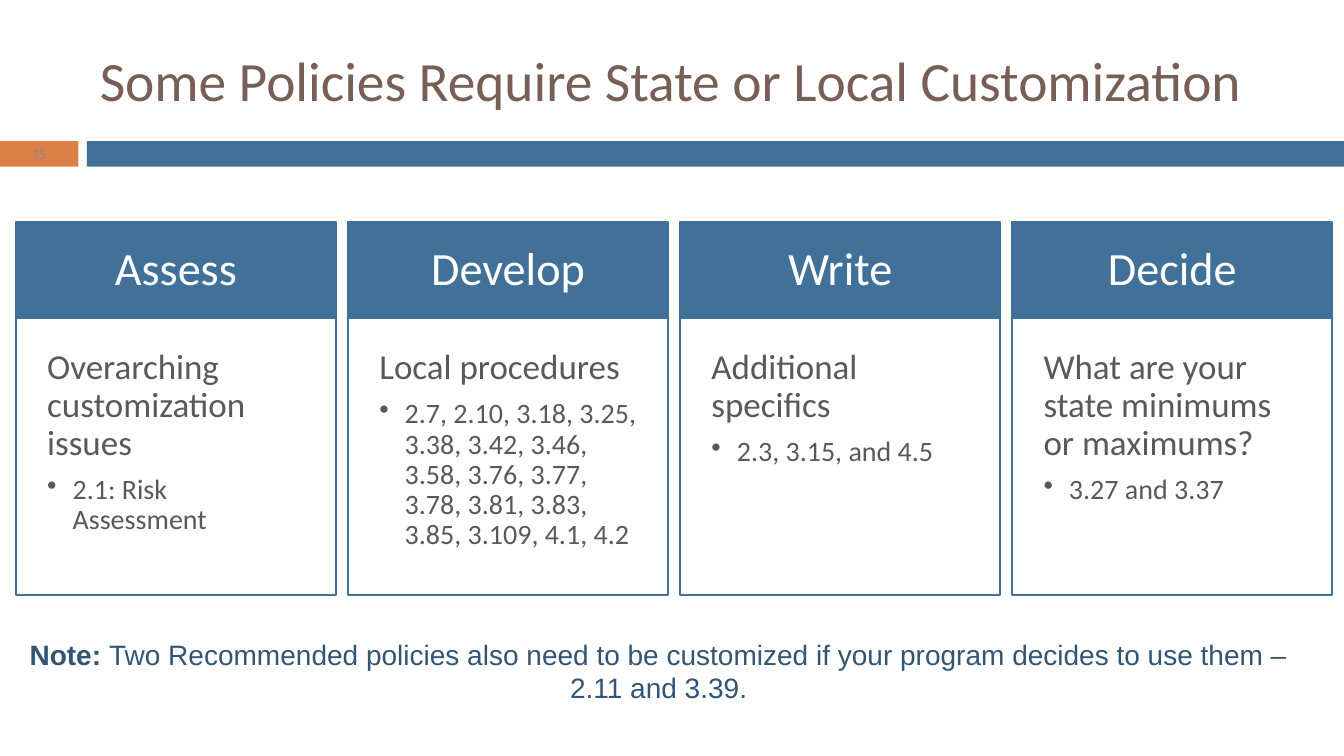
import pptx
import pptx.dml.color
import pptx.enum.shapes
import pptx.enum.text
import pptx.oxml
import pptx.oxml.ns
import pptx.util

Cm = pptx.util.Cm
Pt = pptx.util.Pt
RGBColor = pptx.dml.color.RGBColor
ALIGN = pptx.enum.text.PP_ALIGN
ANCHOR = pptx.enum.text.MSO_ANCHOR

TITLE = "Some Policies Require State or Local Customization"
SLIDE_NUMBER = "15"
COLUMNS = [
    ("Assess", "Overarching customization issues", "2.1: Risk Assessment"),
    ("Develop", "Local procedures",
     "2.7, 2.10, 3.18, 3.25, 3.38, 3.42, 3.46, 3.58, 3.76, 3.77, 3.78, "
     "3.81, 3.83, 3.85, 3.109, 4.1, 4.2"),
    ("Write", "Additional specifics", "2.3, 3.15, and 4.5"),
    ("Decide", "What are your state minimums or maximums?", "3.27 and 3.37"),
]
NOTE_LABEL = "Note: "
NOTE = ("Two Recommended policies also need to be customized if your program "
        "decides to use them – 2.11 and 3.39.")

BLUE = RGBColor(0x41, 0x71, 0x99)
ORANGE = RGBColor(0xDD, 0x80, 0x47)
BROWN = RGBColor(0x77, 0x5F, 0x55)
NAVY = RGBColor(0x31, 0x55, 0x73)
DARK_GREY = RGBColor(0x59, 0x59, 0x59)
MID_GREY = RGBColor(0x89, 0x89, 0x89)
WHITE = RGBColor(0xFF, 0xFF, 0xFF)

SLIDE_WIDTH, SLIDE_HEIGHT = Cm(33.87), Cm(19.05)
BAR_TOP, BAR_HEIGHT = Cm(3.56), Cm(0.64)
COLUMN_LEFT, COLUMN_PITCH, COLUMN_WIDTH = Cm(0.4), Cm(8.37), Cm(8.07)
HEADER_TOP, HEADER_HEIGHT, BODY_HEIGHT = Cm(5.59), Cm(2.43), Cm(6.98)
BULLET_INDENT = Cm(0.64)

TITLE_FORMAT = {"size": Pt(39.6), "name": "Calibri"}
NUMBER_FORMAT = {"size": Pt(10.5), "name": "Calibri"}
HEADER_FORMAT = {"size": Pt(33), "name": "Calibri"}
LEAD_FORMAT = {"size": Pt(25), "name": "Calibri"}
ITEM_FORMAT = {"size": Pt(20), "name": "Calibri"}
LABEL_FORMAT = {"size": Pt(20), "name": "Arial", "bold": True}
NOTE_FORMAT = {"size": Pt(20), "name": "Arial", "bold": False}


def set_attributes(target, values):
    for name, value in values.items():
        setattr(target, name, value)


def add_rectangle(slide, left, top, width, height, fill, line=None):
    shape = slide.shapes.add_shape(
        pptx.enum.shapes.MSO_SHAPE.RECTANGLE, left, top, width, height)
    shape.shadow.inherit = False
    shape.fill.solid()
    shape.fill.fore_color.rgb = fill
    if line is None:
        shape.line.fill.background()
    else:
        shape.line.color.rgb = line
        shape.line.width = Pt(1.5)
    return shape


def set_frame(shape, anchor, inset=None):
    frame = shape.text_frame
    set_attributes(frame, {"word_wrap": True, "vertical_anchor": anchor})
    if inset is not None:
        sides = ("left", "top", "right", "bottom")
        set_attributes(frame, {f"margin_{side}": inset for side in sides})
    return frame


def add_run(paragraph, text, font_format, color):
    run = paragraph.add_run()
    run.text = text
    set_attributes(run.font, font_format)
    run.font.color.rgb = color


def add_bullet(paragraph):
    properties = paragraph._p.get_or_add_pPr()
    properties.set("marL", str(BULLET_INDENT))
    properties.set("indent", str(-BULLET_INDENT))
    properties.append(pptx.oxml.parse_xml(
        f'<a:buChar {pptx.oxml.ns.nsdecls("a")} char="•"/>'))


def add_column(slide, left, heading, lead, item):
    header = add_rectangle(slide, left, HEADER_TOP, COLUMN_WIDTH,
                           HEADER_HEIGHT, BLUE, BLUE)
    paragraph = set_frame(header, ANCHOR.MIDDLE, Cm(0.64)).paragraphs[0]
    set_attributes(paragraph, {"alignment": ALIGN.CENTER, "line_spacing": 0.9})
    add_run(paragraph, heading, HEADER_FORMAT, WHITE)

    body = add_rectangle(slide, left, HEADER_TOP + HEADER_HEIGHT, COLUMN_WIDTH,
                         BODY_HEIGHT, WHITE, BLUE)
    frame = set_frame(body, ANCHOR.TOP, Cm(0.79))
    lead_paragraph, item_paragraph = frame.paragraphs[0], frame.add_paragraph()
    rows = [(lead_paragraph, lead, LEAD_FORMAT, Pt(8.75)),
            (item_paragraph, item, ITEM_FORMAT, Pt(3))]
    for paragraph, text, font_format, space_after in rows:
        set_attributes(paragraph, {"alignment": ALIGN.LEFT,
                                   "line_spacing": 0.9,
                                   "space_after": space_after})
        add_run(paragraph, text, font_format, DARK_GREY)
    item_paragraph.level = 1
    add_bullet(item_paragraph)


def main():
    presentation = pptx.Presentation()
    set_attributes(presentation, {"slide_width": SLIDE_WIDTH,
                                  "slide_height": SLIDE_HEIGHT})
    slide = presentation.slides.add_slide(presentation.slide_layouts[5])

    number_bar = add_rectangle(slide, 0, BAR_TOP, Cm(1.98), BAR_HEIGHT, ORANGE)
    paragraph = set_frame(number_bar, ANCHOR.MIDDLE, 0).paragraphs[0]
    paragraph.alignment = ALIGN.CENTER
    add_run(paragraph, SLIDE_NUMBER, NUMBER_FORMAT, MID_GREY)
    bar_left = Cm(2.19)
    add_rectangle(slide, bar_left, BAR_TOP, SLIDE_WIDTH - bar_left,
                  BAR_HEIGHT, BLUE)

    title = slide.shapes.title
    set_attributes(title, {"left": Cm(2.26), "top": Cm(0.64),
                           "width": Cm(30.2), "height": Cm(2.74)})
    frame = set_frame(title, ANCHOR.MIDDLE)
    frame.auto_size = pptx.enum.text.MSO_AUTO_SIZE.NONE
    frame.paragraphs[0].alignment = ALIGN.LEFT
    add_run(frame.paragraphs[0], TITLE, TITLE_FORMAT, BROWN)

    note = add_rectangle(slide, 0, Cm(15.93), Cm(33.2), Cm(1.96), WHITE)
    paragraph = set_frame(note, ANCHOR.TOP).paragraphs[0]
    paragraph.alignment = ALIGN.CENTER
    add_run(paragraph, NOTE_LABEL, LABEL_FORMAT, NAVY)
    add_run(paragraph, NOTE, NOTE_FORMAT, NAVY)

    for index, column in enumerate(COLUMNS):
        add_column(slide, COLUMN_LEFT + index * COLUMN_PITCH, *column)

    presentation.save("out.pptx")


if __name__ == "__main__":
    main()
